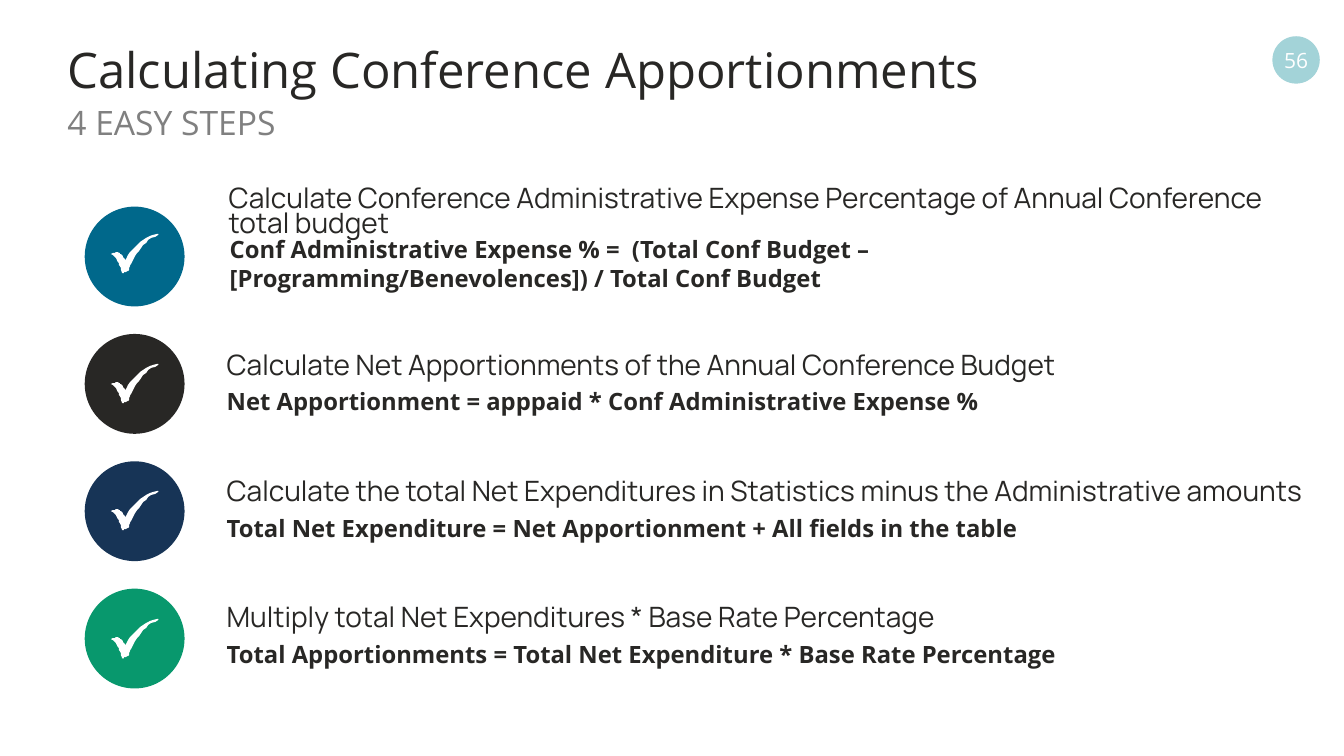
from dataclasses import dataclass

from pptx import Presentation
from pptx.dml.color import RGBColor
from pptx.enum.shapes import MSO_SHAPE as Preset
from pptx.enum.text import MSO_ANCHOR as Anchor, PP_ALIGN as Align
from pptx.util import Inches, Pt


@dataclass(frozen=True)
class Theme:
    body_font: str = "Open Sans"
    step_font: str = "Manrope"
    ink: str = "282725"
    muted: str = "808080"
    white: str = "FFFFFF"
    badge: str = "A3D3D8"
    title_size: int = 35
    subtitle_size: int = 24
    step_size: int = 20
    formula_size: int = 17
    number_size: int = 15
    step_leading: int = 18


THEME = Theme()
TITLE = "Calculating Conference Apportionments"
SUBTITLE = "4 EASY STEPS"
PAGE_NUMBER = "56"

# Each step: circle colour, tick top, then (text, left, top, width, height)
# for the heading and for the formula
STEPS = [
    ("00688B", 2.32,
     ("Calculate Conference Administrative Expense Percentage of Annual "
      "Conference total budget", 2.17, 1.82, 10.71, 0.61),
     ("Conf Administrative Expense % =  (Total Conf Budget – "
      "[Programming/Benevolences]) / Total Conf Budget", 2.18, 2.28, 10.09, 0.67)),
    ("282725", 3.61,
     ("Calculate Net Apportionments of the Annual Conference Budget",
      2.15, 3.48, 9.37, 0.36),
     ("Net Apportionment = apppaid * Conf Administrative Expense %",
      2.15, 3.79, 10.09, 0.39)),
    ("173456", 4.87,
     ("Calculate the total Net Expenditures in Statistics minus the "
      "Administrative amounts", 2.15, 4.73, 10.9, 0.36),
     ("Total Net Expenditure = Net Apportionment + All fields in the table",
      2.15, 5.05, 10.09, 0.39)),
    ("08986D", 6.14,
     ("Multiply total Net Expenditures * Base Rate Percentage",
      2.15, 5.98, 9.37, 0.36),
     ("Total Apportionments = Total Net Expenditure * Base Rate Percentage",
      2.15, 6.3, 10.09, 0.39)),
]
CIRCLE_LEFT, CIRCLE_TOP, CIRCLE_SIZE = 0.84, 2.05, 0.99
LAST_CIRCLE_TOP = 5.84
TICK_LEFT = 1.1

# Tick outline in hundredths of an inch: a start, then cubic curves
TICK_START = (9, 19)
TICK_CURVES = [
    ((7, 18), (4, 18), (0, 20)),
    ((4, 22), (7, 27), (8, 29)),
    ((9, 32), (10, 35), (11, 38)),
    ((11, 39), (11, 39), (12, 39)),
    ((13, 38), (15, 38), (17, 37)),
    ((18, 34), (19, 31), (21, 28)),
    ((23, 24), (25, 20), (30, 14)),
    ((34, 8), (40, 4), (47, 1)),
    ((47, 0), (47, 0), (46, 0)),
    ((38, 2), (32, 5), (26, 11)),
    ((21, 15), (16, 22), (15, 25)),
    ((15, 25), (14, 26), (14, 26)),
    ((13, 24), (12, 22), (11, 21)),
    ((10, 20), (9, 20), (9, 19)),
]
CURVE_STEPS = 6


def tick_points():
    """Sample the tick's curves into short straight pieces."""
    points, start = [], TICK_START
    for first, second, end in TICK_CURVES:
        for step in range(1, CURVE_STEPS + 1):
            t = step / CURVE_STEPS
            u = 1 - t
            points.append(tuple(
                u**3 * a + 3 * u * u * t * b + 3 * u * t * t * c + t**3 * d
                for a, b, c, d in zip(start, first, second, end)))
        start = end
    return points


def paint(shape, color):
    shape.shadow.inherit = False
    shape.fill.solid()
    shape.fill.fore_color.rgb = RGBColor.from_string(color)
    shape.line.fill.background()


def add_circle(page, left, top, size, color):
    circle = page.shapes.add_shape(
        Preset.OVAL, Inches(left), Inches(top), Inches(size), Inches(size))
    paint(circle, color)


def add_tick(page, left, top):
    builder = page.shapes.build_freeform(*TICK_START, scale=Inches(0.01))
    builder.add_line_segments(tick_points(), close=True)
    paint(builder.convert_to_shape(Inches(left), Inches(top)), THEME.white)


def add_text(page, text, left, top, width, height, size, color=THEME.ink,
             font=THEME.body_font, bold=False, leading=None,
             anchor=Anchor.TOP, align=Align.LEFT):
    box = page.shapes.add_textbox(
        Inches(left), Inches(top), Inches(width), Inches(height))
    frame = box.text_frame
    frame.word_wrap = True
    frame.vertical_anchor = anchor
    para = frame.paragraphs[0]
    para.text = text
    para.alignment = align
    if leading:
        para.line_spacing = leading
    para.font.name = font
    para.font.size = Pt(size)
    para.font.bold = bold
    para.font.color.rgb = RGBColor.from_string(color)


def main():
    deck = Presentation()
    deck.slide_width, deck.slide_height = Inches(13.33), Inches(7.5)
    page = deck.slides.add_slide(deck.slide_layouts[6])

    add_circle(page, 12.62, 0.36, 0.47, THEME.badge)
    add_text(page, PAGE_NUMBER, 12.53, 0.45, 0.65, 0.3, THEME.number_size,
             THEME.white, anchor=Anchor.MIDDLE, align=Align.CENTER)
    add_text(page, TITLE, 0.57, 0.39, 11.5, 0.66, THEME.title_size,
             leading=0.9, anchor=Anchor.MIDDLE)
    add_text(page, SUBTITLE, 0.57, 0.96, 11.69, 0.5, THEME.subtitle_size,
             THEME.muted)

    pitch = (LAST_CIRCLE_TOP - CIRCLE_TOP) / (len(STEPS) - 1)
    for index, (color, tick_top, heading, formula) in enumerate(STEPS):
        add_circle(page, CIRCLE_LEFT, CIRCLE_TOP + index * pitch,
                   CIRCLE_SIZE, color)
        add_tick(page, TICK_LEFT, tick_top)
        add_text(page, *formula, THEME.formula_size, bold=True)
        add_text(page, *heading, THEME.step_size, font=THEME.step_font,
                 leading=Pt(THEME.step_leading))

    deck.save("out.pptx")


if __name__ == "__main__":
    main()
